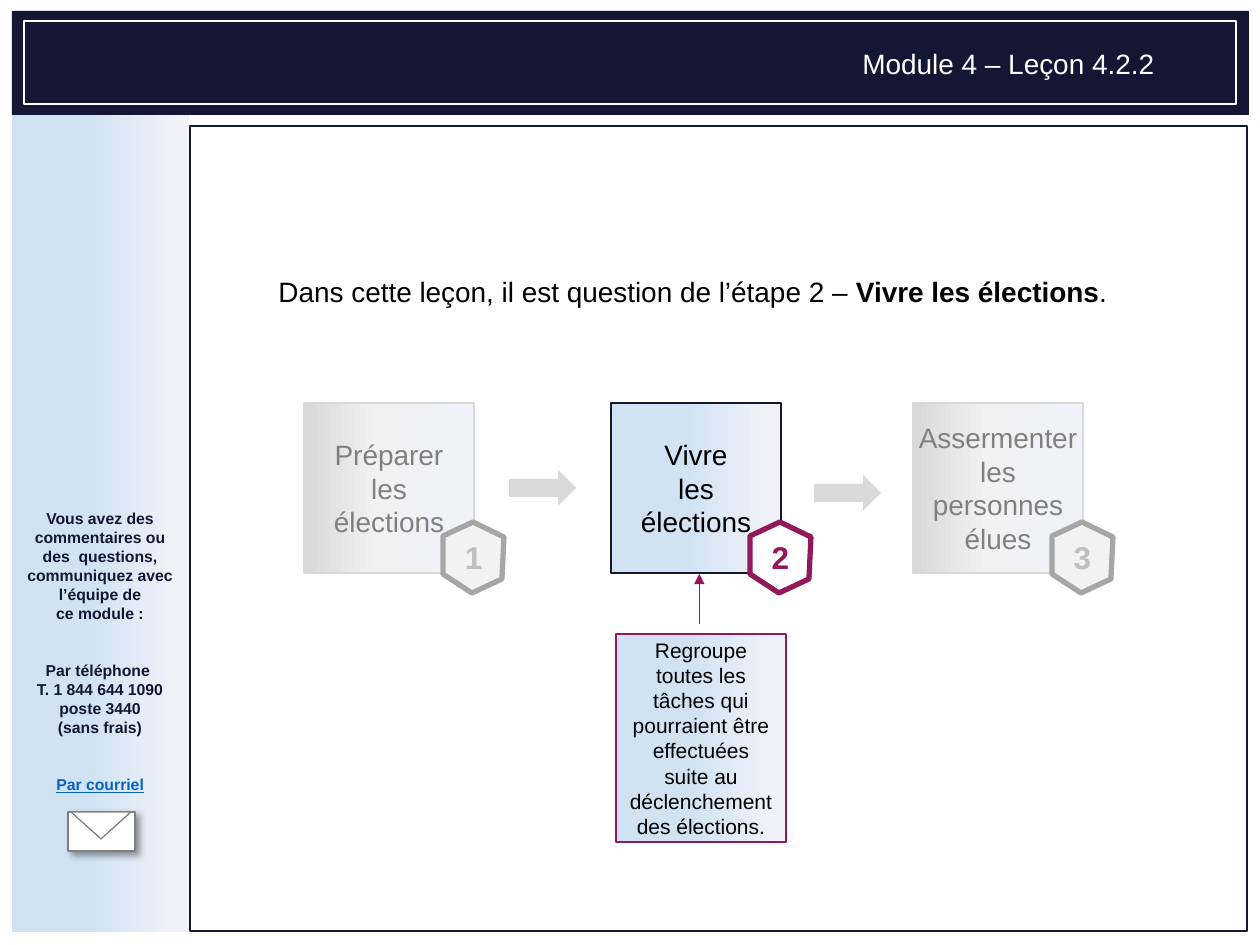
from lxml import etree
from copy import deepcopy
from pptx import Presentation
from pptx.dml.color import RGBColor
from pptx.enum.shapes import MSO_SHAPE
from pptx.enum.text import MSO_ANCHOR, PP_ALIGN
from pptx.oxml import parse_xml
from pptx.oxml.ns import nsdecls, qn
from pptx.util import Pt

PX = 914400 // 126
RECT, TRIANGLE = MSO_SHAPE.RECTANGLE, MSO_SHAPE.ISOSCELES_TRIANGLE
ARROW, CALLOUT = MSO_SHAPE.RIGHT_ARROW, MSO_SHAPE.LINE_CALLOUT_1
TOP, MIDDLE = MSO_ANCHOR.TOP, MSO_ANCHOR.MIDDLE
LEFT, CENTER = PP_ALIGN.LEFT, PP_ALIGN.CENTER
NAVY, PLUM, WHITE, BLACK = "141733", "91195A", "FFFFFF", "000000"
GREY, PALE = "808080", "D9D9D9"
BLUE_FADE = [(0.06, "F1F2F9"), (0.56, "D1E3F3"), (0.99, "CEE1F2")]
GREY_FADE = [(0.06, "F1F2F9"), (0.56, "F2F2F2"), (0.99, PALE)]

prs = Presentation()
prs.slide_width, prs.slide_height = 1260 * PX, 945 * PX
s = prs.slides.add_slide(prs.slide_layouts[6])


def style(sp, fill=None, line=None, width=0.75):
    """Fill is a hex colour, a list of gradient stops, or None."""
    sp.shadow.inherit = False
    if isinstance(fill, list):
        sp.fill.gradient()
        sp.fill.gradient_angle = 180
        stops = sp._element.spPr.find(".//" + qn("a:gsLst"))
        stops.append(deepcopy(stops[0]))
        for stop, (position, color) in zip(sp.fill.gradient_stops, fill):
            stop.position = position
            stop.color.rgb = RGBColor.from_string(color)
    elif fill:
        sp.fill.solid()
        sp.fill.fore_color.rgb = RGBColor.from_string(fill)
    else:
        sp.fill.background()
    if line:
        sp.line.color.rgb = RGBColor.from_string(line)
        sp.line.width = Pt(width)
    else:
        sp.line.fill.background()
    return sp


def write(sp, paragraphs, size, color, align=CENTER, anchor=TOP, wrap=True):
    """Each paragraph is a list of (text, bold) runs."""
    tf = sp.text_frame
    tf.word_wrap, tf.vertical_anchor = wrap, anchor
    for i, runs in enumerate(paragraphs):
        p = tf.add_paragraph() if i else tf.paragraphs[0]
        p.alignment = align
        for text, bold in runs:
            for j, part in enumerate(text.split("\n")):
                if j:
                    p.add_line_break()
                r = p.add_run()
                r.text = part
                r.font.name, r.font.size, r.font.bold = "Arial", Pt(size), bold
                r.font.color.rgb = RGBColor.from_string(color)
    return tf


# Sidebar, content frame and header band
for box, fill, line in [
    ((12, 111, 177, 821), BLUE_FADE, None),
    ((190, 126, 1057, 805), None, NAVY),
    ((12, 11, 1237, 104), NAVY, None),
    ((24, 21, 1212, 83), None, WHITE),
]:
    style(s.shapes.add_shape(RECT, *(v * PX for v in box)), fill, line, 1.5)

# Header text
tb = s.shapes.add_textbox(850 * PX, 40 * PX, 322 * PX, 47 * PX)
write(tb, [[("Module 4 – Leçon 4.2.2", False)]], 16, WHITE, LEFT)

# Contact details
tb = s.shapes.add_textbox(12 * PX, 503 * PX, 176 * PX, 242 * PX)
tf = write(tb, [
    [("Vous avez des commentaires ou des  questions, communiquez avec "
      "l’équipe de\nce module :", True)],
    [("Par téléphone \nT. 1 844 644 1090\nposte 3440\n(sans frais)", True)],
], 9, NAVY)
tf.paragraphs[1].space_before = Pt(21.7)

tb = s.shapes.add_textbox(44 * PX, 769 * PX, 113 * PX, 32 * PX)
tf = write(tb, [[("Par courriel", True)]], 9, "0563C1", LEFT, wrap=False)
tf.paragraphs[0].runs[0].font.underline = True

# Envelope
sp = s.shapes.add_shape(RECT, 68 * PX, 812 * PX, 67 * PX, 39 * PX)
style(sp, WHITE, GREY)
effects = sp._element.spPr.find(qn("a:effectLst"))
effects.append(parse_xml(
    f'<a:outerShdw {nsdecls("a")} blurRad="{Pt(4)}" dist="{Pt(3)}" dir="2700000">'
    '<a:srgbClr val="000000"><a:alpha val="40000"/></a:srgbClr></a:outerShdw>'))
sp = s.shapes.add_shape(TRIANGLE, 71 * PX, 812 * PX, 60 * PX, 27 * PX)
style(sp, WHITE, GREY)
sp._element.spPr.find(qn("a:xfrm")).set("flipV", "1")

# Introduction
tb = s.shapes.add_textbox(266 * PX, 252 * PX, 906 * PX, 112 * PX)
tf = write(tb, [[
    ("Dans cette leçon, il est question de l’étape 2 – ", False),
    ("Vivre les élections", True),
    (".", False),
]], 16, BLACK, LEFT)
tf.paragraphs[0].line_spacing = 1.5

# Steps: box, numbered hexagon, label
HEXAGON = [(30, 0), (61, 15), (59, 57), (29, 71), (0, 52), (0, 14)]
STEPS = [
    (304, "1", "Préparer\nles\nélections", GREY_FADE, PALE, GREY,
     "F2F2F2", "A6A6A6", "BFBFBF"),
    (611, "2", "Vivre\nles\nélections", BLUE_FADE, NAVY, BLACK,
     WHITE, PLUM, PLUM),
    (913, "3", "Assermenter\nles\npersonnes\nélues", GREY_FADE, PALE, GREY,
     "F2F2F2", "A6A6A6", "BFBFBF"),
]
for x, number, label, fade, edge, ink, hex_fill, hex_line, hex_ink in STEPS:
    sp = s.shapes.add_shape(RECT, x * PX, 403 * PX, 170 * PX, 170 * PX)
    style(sp, fade, edge)

    points = [(x + 139 + dx, 522 + dy) for dx, dy in HEXAGON]
    fb = s.shapes.build_freeform(*points[0], scale=PX)
    fb.add_line_segments(points[1:], close=True)
    style(fb.convert_to_shape(), hex_fill, hex_line, 3)

    tb = s.shapes.add_textbox((x + 148) * PX, 532 * PX, 43 * PX, 50 * PX)
    write(tb, [[(number, True)]], 18, hex_ink, anchor=MIDDLE, wrap=False)
    tb = s.shapes.add_textbox((x - 12) * PX, 464 * PX, 194 * PX, 48 * PX)
    write(tb, [[(label, False)]], 16, ink, anchor=MIDDLE)

# Arrows between steps
for x, y in [(509, 470), (814, 475)]:
    style(s.shapes.add_shape(ARROW, x * PX, y * PX, 67 * PX, 36 * PX), PALE)

# Callout pointing at step 2
sp = s.shapes.add_shape(CALLOUT, 616 * PX, 634 * PX, 170 * PX, 208 * PX)
style(sp, BLUE_FADE, PLUM)
for i, value in enumerate([-0.05, 0.49, -0.29, 0.49]):
    sp.adjustments[i] = value
etree.SubElement(sp.line._get_or_add_ln(), qn("a:tailEnd")).set("type", "triangle")
write(sp, [[("Regroupe toutes les tâches qui pourraient être effectuées suite au "
             "déclenchement des élections.", False)]], 12, BLACK, anchor=MIDDLE)

prs.save("out.pptx")
